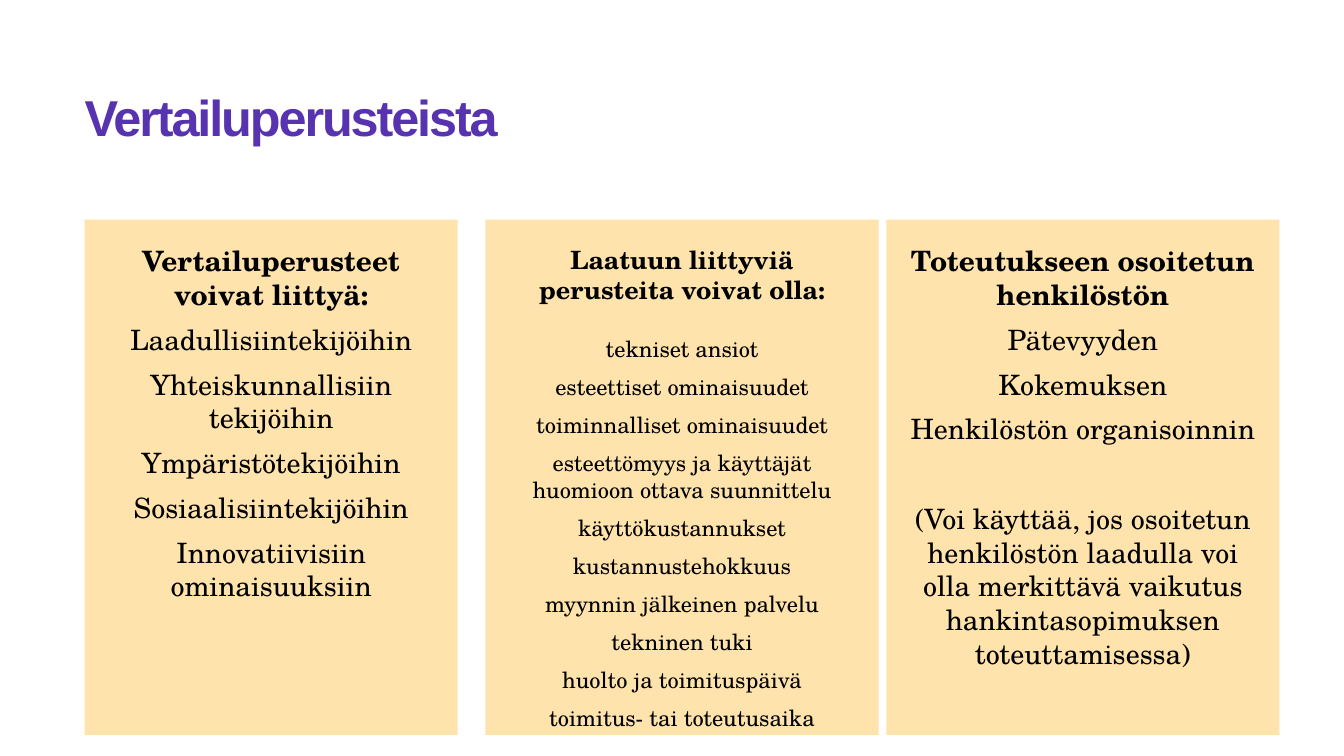
from lxml import etree
from pptx import Presentation
from pptx import util as u
from pptx.dml import color
from pptx.enum import text
from pptx.oxml import ns

SLIDE_WIDTH, SLIDE_HEIGHT = 13.33, 7.5
LEFT, TOP = 0.84, 2.18
COLUMN_STEP = 3.975
COLUMN_HEIGHT = 5.11
BODY_FONT = "TeX Gyre Schola"
ITEM_GAP = 8

COLUMNS = [
    dict(width=3.7, heading="Vertailuperusteet voivat liittyä:", heading_size=20, item_size=20,
         items=["Laadullisiintekijöihin", "Yhteiskunnallisiin tekijöihin",
                "Ympäristötekijöihin", "Sosiaalisiintekijöihin",
                "Innovatiivisiin ominaisuuksiin"], gaps={}),
    dict(width=3.9, heading="Laatuun liittyviä perusteita voivat olla:", heading_size=18, item_size=16,
         items=["tekniset ansiot", "esteettiset ominaisuudet", "toiminnalliset ominaisuudet",
                "esteettömyys ja käyttäjät huomioon ottava suunnittelu",
                "käyttökustannukset", "kustannustehokkuus", "myynnin jälkeinen palvelu",
                "tekninen tuki", "huolto ja toimituspäivä", "toimitus- tai toteutusaika"],
         gaps={0: 21.6}),
    dict(width=3.9, heading="Toteutukseen osoitetun henkilöstön", heading_size=20, item_size=20,
         items=["Pätevyyden", "Kokemuksen", "Henkilöstön organisoinnin",
                "(Voi käyttää, jos osoitetun henkilöstön laadulla voi olla merkittävä "
                "vaikutus hankintasopimuksen toteuttamisessa)"],
         gaps={3: 40}),
]


def rgb(value):
    return color.RGBColor.from_string(value)


def place(shape, left, top, width, height):
    shape.left, shape.top = u.Inches(left), u.Inches(top)
    shape.width, shape.height = u.Inches(width), u.Inches(height)


def prepare_frame(shape, inset):
    frame = shape.text_frame
    frame.word_wrap = True
    frame.auto_size = text.MSO_AUTO_SIZE.NONE
    frame.vertical_anchor = text.MSO_ANCHOR.TOP
    frame.margin_left = frame.margin_right = u.Inches(inset)
    frame.margin_top = frame.margin_bottom = u.Inches(inset)
    return frame


def add_run(paragraph, wording, size, font, colour, bold):
    run = paragraph.add_run()
    run.text = wording
    run.font.size = u.Pt(size)
    run.font.name = font
    run.font.bold = bold
    run.font.color.rgb = rgb(colour)
    return run


def fill_title(title, wording):
    place(title, LEFT, 0.92, 11.66, 1.1)
    paragraph = prepare_frame(title, 0).paragraphs[0]
    paragraph.alignment = text.PP_ALIGN.LEFT
    paragraph.line_spacing = 0.9
    run = add_run(paragraph, wording, 36, "Arial", "5733AF", True)
    run.font._element.set("spc", "-150")


def fill_line(paragraph, wording, size, bold, gap):
    properties = paragraph._p.get_or_add_pPr()
    properties.set("marL", "0")
    properties.set("indent", "0")
    etree.SubElement(properties, ns.qn("a:buNone"))
    paragraph.alignment = text.PP_ALIGN.CENTER
    paragraph.space_before = u.Pt(gap)
    add_run(paragraph, wording, size, BODY_FONT, "000000", bold)


def fill_column(body, index, column):
    place(body, LEFT + index * COLUMN_STEP, TOP, column["width"], COLUMN_HEIGHT)
    body.fill.solid()
    body.fill.fore_color.rgb = rgb("FEE3AC")
    frame = prepare_frame(body, 0.24)
    fill_line(frame.paragraphs[0], column["heading"], column["heading_size"], True, 0)
    for number, item in enumerate(column["items"]):
        gap = column["gaps"].get(number, ITEM_GAP)
        fill_line(frame.add_paragraph(), item, column["item_size"], False, gap)


def main():
    presentation = Presentation()
    presentation.slide_width = u.Inches(SLIDE_WIDTH)
    presentation.slide_height = u.Inches(SLIDE_HEIGHT)
    slide = presentation.slides.add_slide(presentation.slide_layouts.get_by_name("Comparison"))
    title, *bodies = slide.placeholders
    fill_title(title, "Vertailuperusteista")
    for index, (body, column) in enumerate(zip(bodies, COLUMNS)):
        fill_column(body, index, column)
    for unused in bodies[len(COLUMNS):]:
        unused._element.getparent().remove(unused._element)
    presentation.save("out.pptx")


if __name__ == "__main__":
    main()
